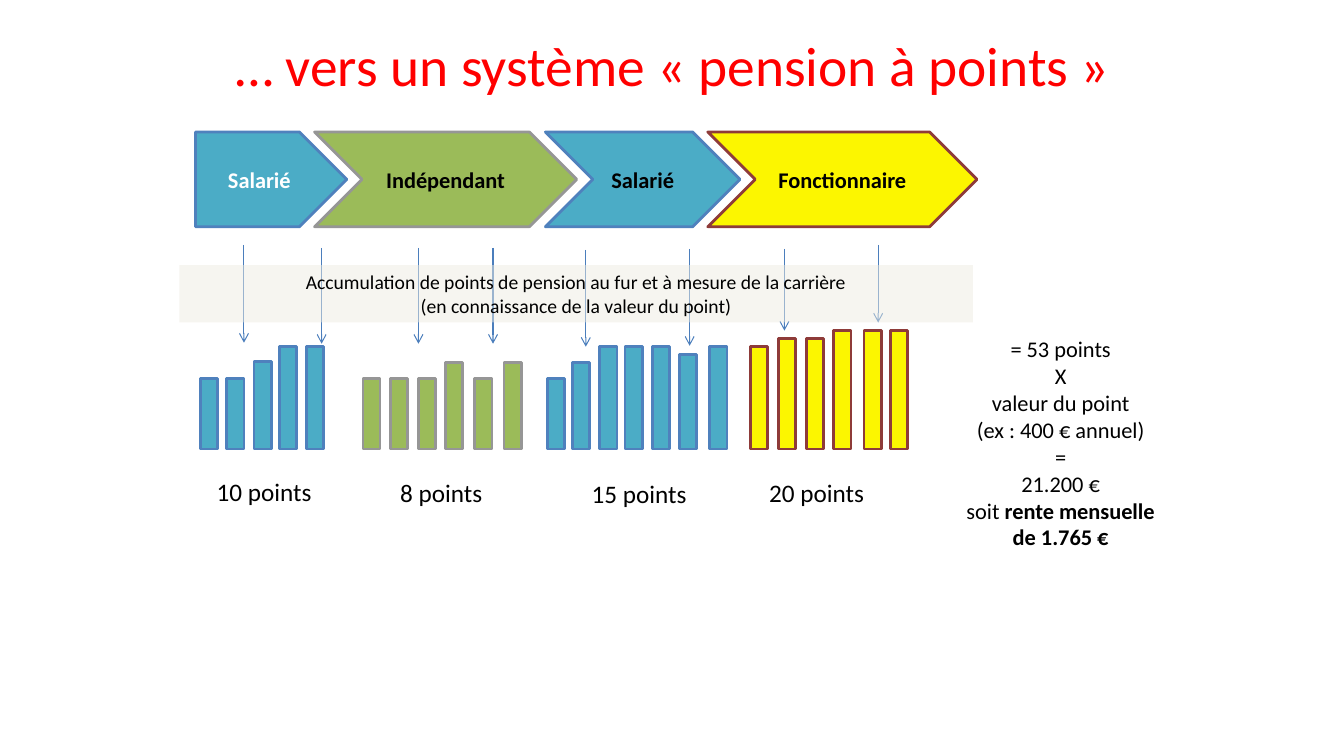
"""Build a slide on the move to a points-based pension system."""
from lxml import etree
from pptx import Presentation
from pptx import util as u
from pptx.dml.color import RGBColor
from pptx.enum import shapes, text
from pptx.oxml.ns import qn

hue = RGBColor.from_string
kinds = shapes.MSO_SHAPE
CELL = u.Inches(0.1)

deck = Presentation()
deck.slide_width, deck.slide_height = u.Inches(13.33), u.Inches(7.5)
slide = deck.slides.add_slide(deck.slide_layouts[6])


def draw(kind, box, fill, line=None):
    """Add a filled shape; box is in grid cells."""
    shape = slide.shapes.add_shape(kind, *(round(n * CELL) for n in box))
    shape.shadow.inherit = False
    shape.fill.solid()
    shape.fill.fore_color.rgb = hue(fill)
    if line:
        shape.line.color.rgb = hue(line)
        shape.line.width = u.Pt(2)
    else:
        shape.line.fill.background()
    return shape


def style(frame, size, ink="000000", align=text.PP_ALIGN.CENTER, wrap=True):
    """Format every paragraph and run of a text frame."""
    frame.word_wrap = wrap
    for para in frame.paragraphs:
        para.alignment = align
        for run in para.runs:
            run.font.name, run.font.size = "Calibri", u.Pt(size)
            run.font.color.rgb = hue(ink)


blue, green, gold = ("4BACC6", "4F81BD"), ("9BBB59", "969696"), ("FCF600", "8E3B39")

stages = [
    ("Salarié", kinds.PENTAGON, 19.4, 15, blue, "FFFFFF"),
    ("Indépendant", kinds.CHEVRON, 31.2, 26, green, "000000"),
    ("Fonctionnaire", kinds.CHEVRON, 70.2, 26.7, gold, "000000"),
    ("Salarié", kinds.CHEVRON, 54.1, 19.3, blue, "000000"),
]
for name, kind, left, width, tint, ink in stages:
    stage = draw(kind, (left, 13.1, width, 9.4), *tint)
    frame = stage.text_frame
    frame.text = name
    frame.vertical_anchor = text.MSO_ANCHOR.MIDDLE
    style(frame, 16, ink)
    frame.paragraphs[0].runs[0].font.bold = True

arrows = [
    (24.2, 24.3, 34), (31.9, 24.6, 34.1), (41.5, 24.6, 34.1), (48.9, 24.6, 34.1),
    (58.1, 24.8, 34.4), (68.4, 24.7, 34.3), (77.8, 24.7, 32.8), (87.1, 24.3, 32),
]
for x, top, end in arrows:
    ends = (round(n * CELL) for n in (x, top, x, end))
    arrow = slide.shapes.add_connector(shapes.MSO_CONNECTOR.STRAIGHT, *ends)
    arrow.line.color.rgb = hue("4B7EBC")
    arrow.line.width = u.Pt(0.75)
    etree.SubElement(arrow.line._get_or_add_ln(), qn("a:tailEnd"), type="arrow")
    etree.SubElement(arrow._element.spPr, qn("a:effectLst"))

title = slide.shapes.add_textbox(*(round(n * CELL) for n in (21.7, 2.9, 90, 6.9)))
title.text_frame.text = "… vers un système « pension à points »"
title.text_frame.vertical_anchor = text.MSO_ANCHOR.MIDDLE
style(title.text_frame, 39.6, "FF0000")

band = draw(kinds.RECTANGLE, (17.8, 26.3, 78.7, 5.7), "EEECE1")
shade = band._element.spPr.find(qn("a:solidFill"))[0]
etree.SubElement(shade, qn("a:alpha"), val="49000")
band.text_frame.text = (
    "Accumulation de points de pension au fur et à mesure de la carrière\v"
    "(en connaissance de la valeur du point)"
)
band.text_frame.vertical_anchor = text.MSO_ANCHOR.TOP
style(band.text_frame, 14)

total = slide.shapes.add_textbox(*(round(n * CELL) for n in (94.2, 32.8, 22, 22.6)))
frame = total.text_frame
frame.text = "= 53 points\vX\nvaleur du point\n(ex : 400 € annuel)\n=\n21.200 €\vsoit "
last = frame.paragraphs[-1]
last.add_run().text = "rente mensuelle"
last.add_line_break()
last.add_run().text = "de 1.765 €"
for run in last.runs[-2:]:
    run.font.bold = True
style(frame, 16)

BASE = 44.55
groups = [
    (blue, [(19.9, 7), (22.5, 7), (25.2, 8.7), (27.7, 10.2), (30.4, 10.2)]),
    (green, [(36, 7), (38.7, 7), (41.5, 7), (44.2, 8.6), (47.1, 7), (50, 8.6)]),
    (blue, [(54.3, 7), (56.8, 8.6), (59.5, 10.2), (62, 10.2), (64.7, 10.2),
            (67.4, 9.4), (70.4, 10.2)]),
    (gold, [(74.4, 10.2), (77.2, 11), (80, 11), (82.7, 11.8), (85.7, 11.8),
            (88.3, 11.8)]),
]
for tint, bars in groups:
    for left, high in bars:
        draw(kinds.FLOWCHART_PROCESS, (left, BASE - high, 1.7, high), *tint)

scores = [(10, 20.5, 46.8, 11.5), (8, 38.7, 46.9, 10.3),
          (15, 57.7, 47, 11.5), (20, 75.3, 46.9, 11.5)]
for score, left, top, width in scores:
    label = slide.shapes.add_textbox(*(round(n * CELL) for n in (left, top, width, 4)))
    label.text_frame.text = f"{score} points"
    style(label.text_frame, 18, align=text.PP_ALIGN.LEFT, wrap=False)

deck.save("out.pptx")
